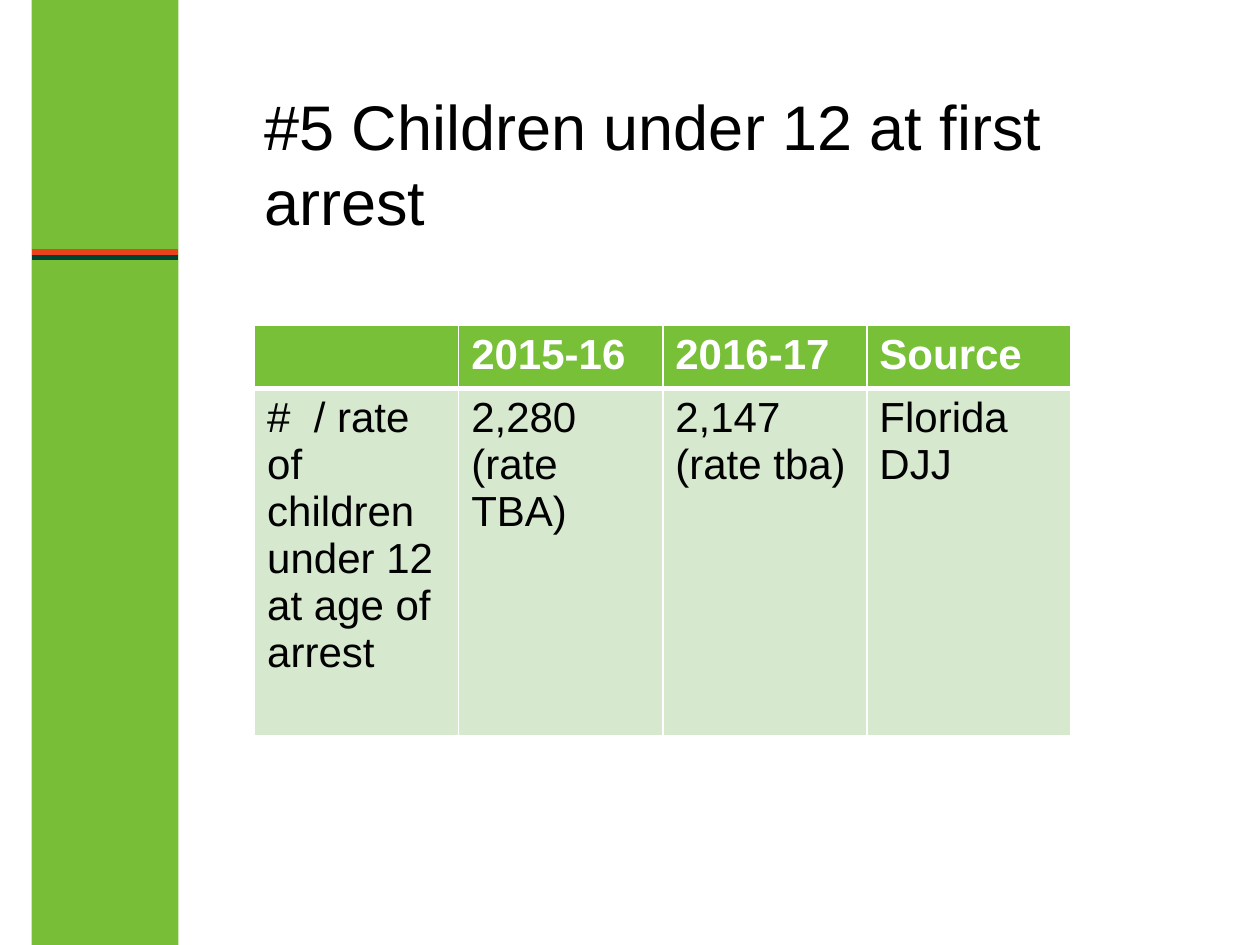
from lxml.etree import SubElement
from pptx import Presentation
from pptx.dml.color import RGBColor
from pptx.enum.shapes import MSO_CONNECTOR as CONN, MSO_SHAPE as SHAPE
from pptx.enum.text import MSO_ANCHOR as ANCHOR
from pptx.oxml.ns import qn
from pptx.util import Pt

COLORS = {
    "band": "78BF37", "red": "EA421F", "dark": "004531",
    "header": "78C037", "body": "D6E8CE", "white": "FFFFFF", "black": "000000",
}
ROWS = [
    ["", "2015-16", "2016-17", "Source"],
    ["#  / rate of children under 12 at age of  arrest",
     "2,280 (rate TBA)", "2,147 (rate tba)", "Florida DJJ"],
]


def rgb(name):
    return RGBColor.from_string(COLORS[name])


def add_run(p, text, size, color, bold=False):
    r = p.add_run()
    r.text = text
    r.font.name = "Arial"
    r.font.size = Pt(size)
    r.font.bold = bold
    r.font.color.rgb = rgb(color)


def add_side_band(s, x, y, w, h):
    sp = s.shapes.add_shape(SHAPE.RECTANGLE, Pt(x), Pt(y), Pt(w), Pt(h))
    sp.shadow.inherit = False
    sp.fill.solid()
    sp.fill.fore_color.rgb = rgb("band")
    sp.line.fill.background()
    for offset, color in ((144, "red"), (147, "dark")):
        line_y = Pt(y + offset)
        line = s.shapes.add_connector(CONN.STRAIGHT, Pt(x), line_y, Pt(x + w), line_y)
        line.line.color.rgb = rgb(color)
        line.line.width = Pt(3)
        SubElement(line._element.spPr, qn("a:effectLst"))


def add_title(s, x, y, w, h, text):
    tf = s.shapes.add_textbox(Pt(x), Pt(y), Pt(w), Pt(h)).text_frame
    tf.word_wrap = True
    tf.vertical_anchor = ANCHOR.MIDDLE
    add_run(tf.paragraphs[0], text, 36, "black")


def set_borders(cell, top, bottom):
    tc_pr = cell._tc.get_or_add_tcPr()
    for side, width in (("L", 1), ("R", 1), ("T", top), ("B", bottom)):
        ln = SubElement(tc_pr, qn(f"a:ln{side}"), w=str(Pt(width)))
        fill = SubElement(ln, qn("a:solidFill"))
        SubElement(fill, qn("a:srgbClr"), val=COLORS["white"])


def add_arrest_table(s, x, y, w, row_heights):
    frame = s.shapes.add_table(len(ROWS), len(ROWS[0]), Pt(x), Pt(y), Pt(w),
                               Pt(sum(row_heights)))
    table = frame.table
    for i, (height, texts) in enumerate(zip(row_heights, ROWS)):
        header = i == 0
        table.rows[i].height = Pt(height)
        for j, text in enumerate(texts):
            cell = table.cell(i, j)
            set_borders(cell, *((1, 3) if header else (3, 1)))
            cell.fill.solid()
            cell.fill.fore_color.rgb = rgb("header" if header else "body")
            if text:
                add_run(cell.text_frame.paragraphs[0], text, 24,
                        "white" if header else "black", header)


def main():
    prs = Presentation()
    prs.slide_width, prs.slide_height = Pt(720), Pt(540)
    s = prs.slides.add_slide(prs.slide_layouts[6])
    add_side_band(s, 18, 0, 84, 540)
    add_title(s, 144, 48, 522, 90, "#5 Children under 12 at first arrest")
    add_arrest_table(s, 145.5, 186, 466.5, [29.5, 198.5])
    prs.save("out.pptx")


if __name__ == "__main__":
    main()
